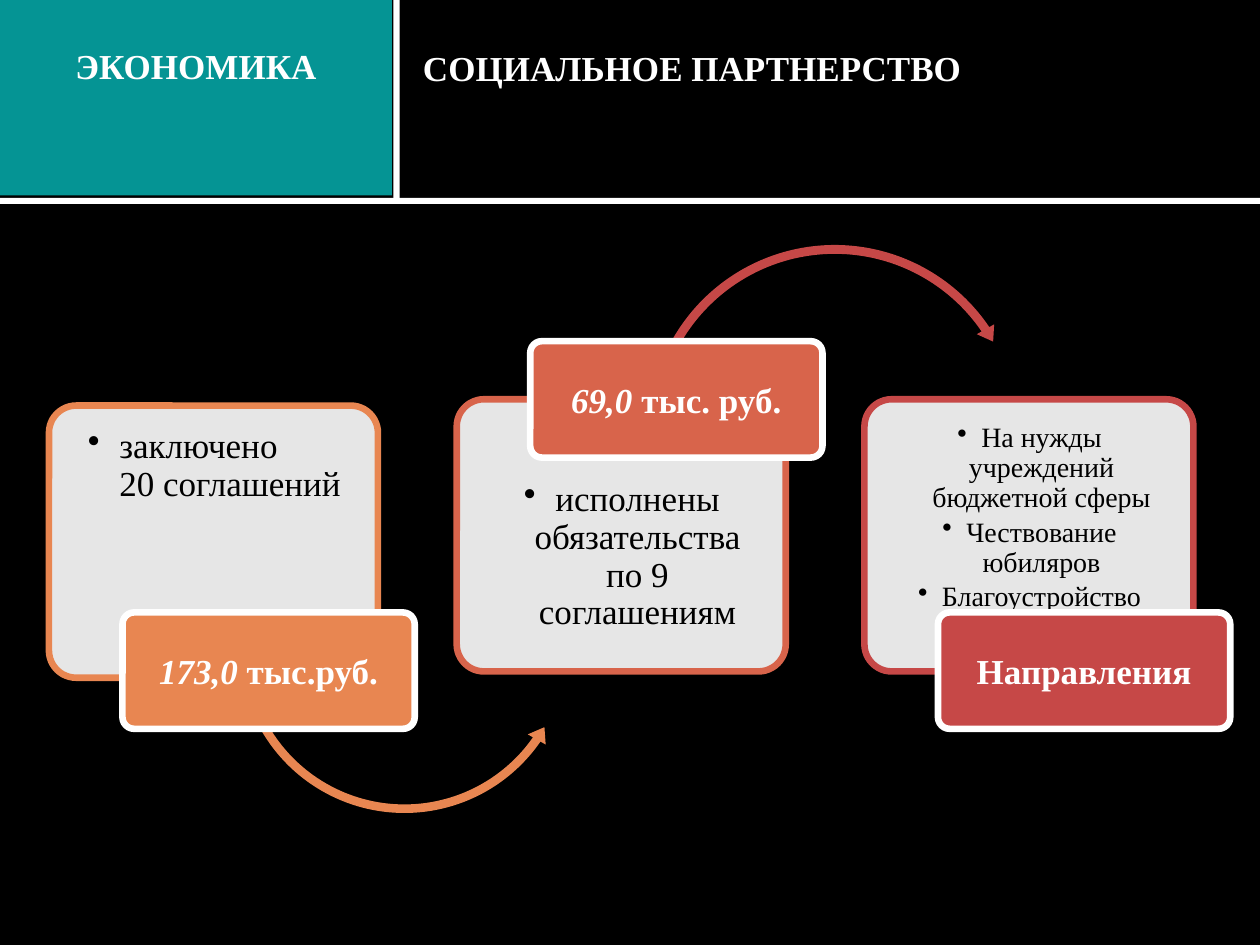
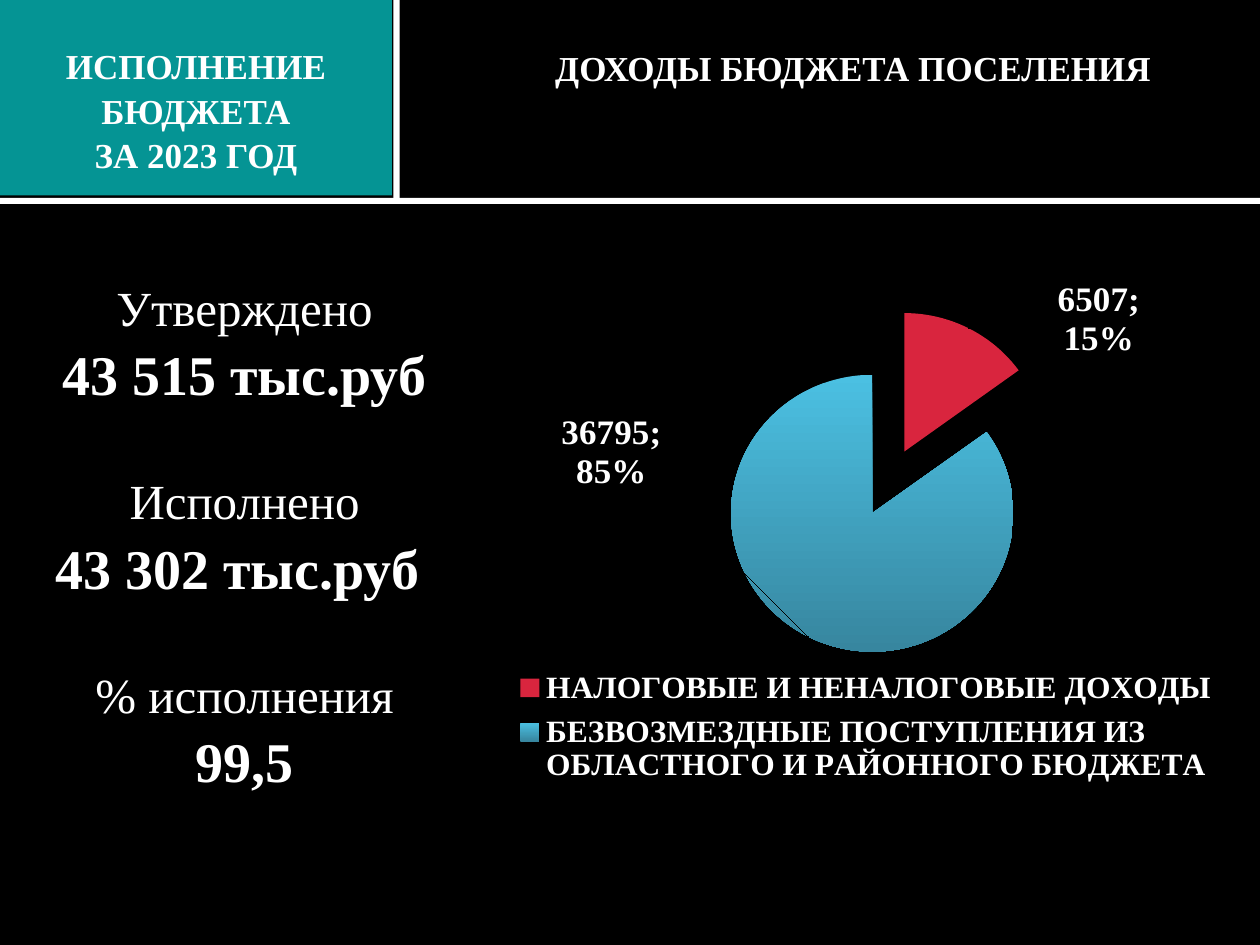
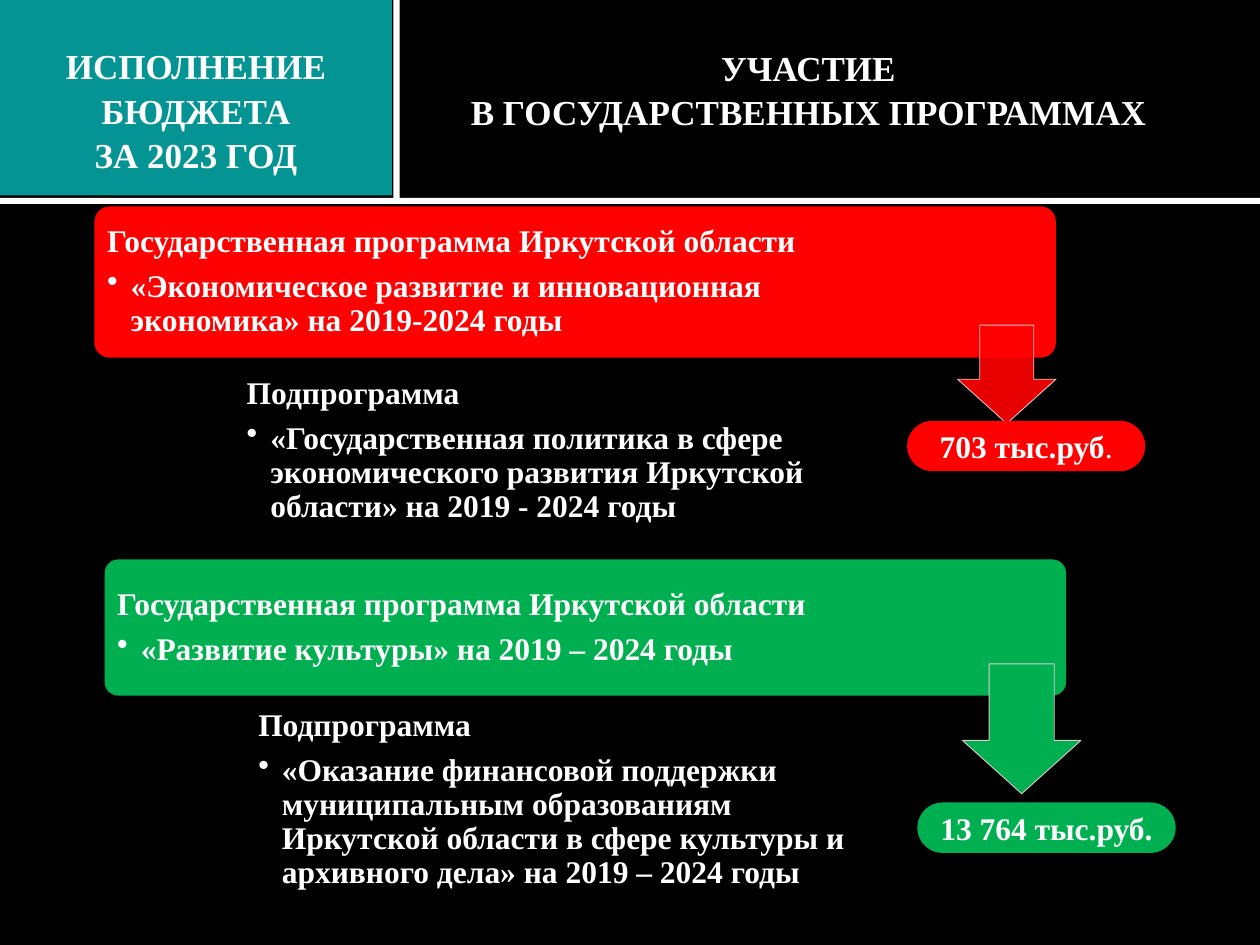
from dataclasses import dataclass

from lxml.etree import SubElement
from pptx import Presentation
from pptx.chart.data import CategoryChartData
from pptx.dml.color import RGBColor
from pptx.enum.chart import XL_CHART_TYPE, XL_LABEL_POSITION, XL_LEGEND_POSITION
from pptx.enum.shapes import MSO_SHAPE as SHAPE
from pptx.enum.text import MSO_ANCHOR as ANCHOR, MSO_AUTO_SIZE, PP_ALIGN as ALIGN
from pptx.oxml.ns import qn
from pptx.util import Pt


@dataclass(frozen=True)
class Theme:
    font: str = "Times New Roman"
    black: str = "000000"
    white: str = "FFFFFF"
    teal: str = "059494"
    orange: str = "E88651"
    coral: str = "D8644B"
    crimson: str = "C64847"
    red: str = "FF0000"
    green: str = "00B050"
    arrow_edge: str = "F5D4D7"
    tax_income: str = "D9253E"
    grants_top: str = "4BC0E2"
    grants_bottom: str = "37869F"
    heading: float = 20
    program: float = 18
    detail: float = 16
    caption: float = 28
    figure: float = 32


THEME = Theme()
BUDGET_SECTION = "ИСПОЛНЕНИЕ\nБЮДЖЕТА\nЗА 2023 ГОД"


def rgb(color):
    return RGBColor.from_string(color)


def set_alpha(fill_parent, percent):
    color = next(fill_parent.iter(qn("a:srgbClr")))
    SubElement(color, qn("a:alpha")).set("val", str(percent * 1000))


def style_font(font, size, color=THEME.white, bold=False, italic=False):
    font.name = THEME.font
    font.size = Pt(size)
    font.bold = bold
    font.italic = italic
    font.color.rgb = rgb(color)


def style_paragraph(paragraph, size, color=THEME.white, bold=False, align=ALIGN.CENTER):
    paragraph.alignment = align
    for run in paragraph.runs:
        style_font(run.font, size, color, bold)


def add_bullet(paragraph, margin, hanging):
    properties = paragraph._p.get_or_add_pPr()
    properties.set("marL", str(Pt(margin)))
    properties.set("indent", str(-Pt(hanging)))
    SubElement(properties, qn("a:buChar")).set("char", "•")


def set_frame(frame, insets=(0, 0, 0, 0), anchor=ANCHOR.TOP, wrap=True):
    frame.margin_left, frame.margin_top, frame.margin_right, frame.margin_bottom = map(Pt, insets)
    frame.vertical_anchor = anchor
    frame.word_wrap = wrap
    frame.auto_size = MSO_AUTO_SIZE.NONE


def add_block(slide, preset, box, fill, line=None, line_width=3.78, adjustments=()):
    block = slide.shapes.add_shape(preset, *map(Pt, box))
    block.shadow.inherit = False
    block.fill.solid()
    block.fill.fore_color.rgb = rgb(fill)
    if line:
        block.line.color.rgb = rgb(line)
        block.line.width = Pt(line_width)
    else:
        block.line.fill.background()
    for index, value in enumerate(adjustments):
        block.adjustments[index] = value
    return block


def add_text(slide, box, insets, anchor=ANCHOR.TOP):
    frame = slide.shapes.add_textbox(*map(Pt, box)).text_frame
    set_frame(frame, insets, anchor)
    return frame


def write_heading(frame, text):
    frame.text = text
    for index, paragraph in enumerate(frame.paragraphs):
        style_paragraph(paragraph, THEME.heading, bold=True)
        paragraph.space_before = Pt(1.3 if index else 0)


def write_amount(block, parts, size):
    set_frame(block.text_frame, anchor=ANCHOR.MIDDLE)
    paragraph = block.text_frame.paragraphs[0]
    paragraph.alignment = ALIGN.CENTER
    for text, bold, italic in parts:
        run = paragraph.add_run()
        run.text = text
        style_font(run.font, size, bold=bold, italic=italic)


def share_frame(layout, slide):
    bands = (
        ((0, 113, 720, 3.6), THEME.white),
        ((0, 0, 720, 113), THEME.black),
        ((224.8, 0, 3.6, 114.5), THEME.white),
    )
    for index, (box, fill) in enumerate(bands):
        band = add_block(slide, SHAPE.RECTANGLE, box, fill).element
        band.nvSpPr.cNvPr.set("id", str(20 + index))
        layout.shapes.element.insert(2 + index, band)


def add_headed_slide(prs, section, title, left, width):
    slide = prs.slides.add_slide(prs.slide_layouts[5])
    tag = add_block(slide, SHAPE.RECTANGLE, (0, 0, 224, 111.6), THEME.teal)
    set_frame(tag.text_frame, (0, 25.6, 0, 0), wrap=False)
    write_heading(tag.text_frame, section)
    heading = slide.shapes.title
    heading.left, heading.top, heading.width, heading.height = map(Pt, (left, 21, width, 55))
    set_frame(heading.text_frame, (7.2, 5.3, 7.2, 3.6), wrap=False)
    write_heading(heading.text_frame, title)
    return slide


def add_card(slide, left, top, text_top, color, lines, size, indent, align=ALIGN.CENTER):
    card = add_block(slide, SHAPE.ROUNDED_RECTANGLE, (left, top, 188, 155.5),
                     THEME.white, color, adjustments=(0.1,))
    set_alpha(card.element.spPr.find(qn("a:solidFill")), 90)
    frame = add_text(slide, (left + 3.6, text_top, 181.4, 115), (10, 10, 10, 10))
    frame.text = "\n".join(lines)
    for paragraph in frame.paragraphs:
        add_bullet(paragraph, *indent)
        paragraph.line_spacing = 0.9
        paragraph.space_after = Pt(size * 0.15)
        style_paragraph(paragraph, size, THEME.black, align=align)


def add_label(slide, left, top, color, parts):
    label = add_block(slide, SHAPE.ROUNDED_RECTANGLE, (left, top, 167, 66.5),
                      color, THEME.white, adjustments=(0.1,))
    write_amount(label, parts, THEME.heading)


def build_partnership(slide):
    lefts = [28 + 233 * column for column in range(3)]
    add_card(slide, lefts[0], 231.8, 234.7, THEME.orange,
             ["заключено\v20 соглашений"], THEME.heading, (26.6, 18), ALIGN.LEFT)
    add_block(slide, SHAPE.LEFT_CIRCULAR_ARROW, (133.2, 272.2, 195.8, 195.8), THEME.orange,
              adjustments=(0.025, 3.094, 20.849, 90.245, 0.03))
    add_label(slide, lefts[0] + 42, 350, THEME.orange,
              [("173,0", True, True), (" тыс.руб.", True, False)])
    add_card(slide, lefts[1], 228.2, 265, THEME.coral,
             ["исполнены обязательства по 9 соглашениям"], THEME.heading, (18, 18))
    add_block(slide, SHAPE.CIRCULAR_ARROW, (367.2, 136.8, 219.6, 219.6), THEME.crimson,
              adjustments=(0.023, 2.738, 195.507, 125.755, 0.026))
    add_label(slide, lefts[1] + 42, 195, THEME.coral,
              [("69,0 ", True, True), ("тыс. руб.", True, False)])
    add_card(slide, lefts[2], 228.2, 231.8, THEME.crimson,
             ["На нужды учреждений бюджетной сферы", "Чествование юбиляров", "Благоустройство"],
             THEME.detail, (13.7, 13.7))
    add_label(slide, lefts[2] + 42, 350, THEME.crimson, [("Направления", True, False)])


def add_totals(slide, totals):
    frame = add_text(slide, (24.5, 148.3, 233.3, 348.5), (4.3, 10, 7.2, 3.6))
    frame.text = "\n".join(f"{caption}\n{figure}" for caption, figure in totals)
    for index, paragraph in enumerate(frame.paragraphs):
        is_figure = index % 2 == 1
        style_paragraph(paragraph, THEME.figure if is_figure else THEME.caption, bold=is_figure)
        paragraph.space_before = Pt(2 if is_figure else 36.7 if index else 0)


def add_manual_layout(parent, **values):
    layout = SubElement(parent, qn("c:layout"))
    manual = SubElement(layout, qn("c:manualLayout"))
    for tag, value in values.items():
        SubElement(manual, qn(f"c:{tag}")).set("val", str(value))
    return layout


def add_income_pie(slide):
    data = CategoryChartData()
    data.categories = ["НАЛОГОВЫЕ И НЕНАЛОГОВЫЕ ДОХОДЫ",
                       "БЕЗВОЗМЕЗДНЫЕ ПОСТУПЛЕНИЯ ИЗ ОБЛАСТНОГО И РАЙОННОГО БЮДЖЕТА"]
    data.add_series("Series 1", (6507, 36795))
    box = map(Pt, (286.6, 139.7, 408.2, 351.4))
    chart = slide.shapes.add_chart(XL_CHART_TYPE.PIE, *box, data).chart
    chart.has_title = False
    style_font(chart.font, THEME.program, bold=True)
    chart.has_legend = True
    legend = chart.legend
    legend.position = XL_LEGEND_POSITION.BOTTOM
    legend.include_in_layout = False
    style_font(legend.font, THEME.program, bold=True)
    legend._element.find(qn("c:legendPos")).addnext(add_manual_layout(
        legend._element, xMode="edge", yMode="edge", x=0.02, y=0.67, w=0.98, h=0.22))

    plot = chart.plots[0]
    plot.vary_by_categories = True
    area = chart._chartSpace.chart.plotArea
    for old_layout in area.findall(qn("c:layout")):
        area.remove(old_layout)
    area.insert(0, add_manual_layout(area, layoutTarget="inner", xMode="edge", yMode="edge",
                                     x=0.149, y=0.088, w=0.785, h=0.574))

    series = plot.series[0]
    taxes, grants = (series.points[index] for index in range(2))
    taxes.format.fill.solid()
    taxes.format.fill.fore_color.rgb = rgb(THEME.tax_income)
    shading = grants.format.fill
    shading.gradient()
    shading.gradient_angle = 270
    for stop, color in zip(shading.gradient_stops, (THEME.grants_top, THEME.grants_bottom)):
        stop.color.rgb = rgb(color)
    explosion = SubElement(series._element, qn("c:explosion"))
    explosion.set("val", "25")
    series._element.find(qn("c:dPt")).addprevious(explosion)

    for point in (taxes, grants):
        style_font(point.data_label.font, THEME.heading, bold=True)
        point.data_label.position = XL_LABEL_POSITION.OUTSIDE_END
    shifts = ((0.12, 0.06), (-0.2, -0.38))
    for label, (x, y) in zip(series._element.iter(qn("c:dLbl")), shifts):
        label.find(qn("c:idx")).addnext(add_manual_layout(label, x=x, y=y))
        label.find(qn("c:showPercent")).set("val", "1")
        SubElement(label, qn("c:separator")).text = ";\n"


def add_program_text(slide, box, heading, name):
    frame = add_text(slide, box, (5, 5, 5, 5), ANCHOR.MIDDLE)
    frame.text = f"{heading}\n{name}"
    add_bullet(frame.paragraphs[1], 13.5, 13.5)
    for paragraph, gap in zip(frame.paragraphs, (0.35, 0.15)):
        paragraph.line_spacing = 0.9
        paragraph.space_after = Pt(THEME.program * gap)
        style_paragraph(paragraph, THEME.program, bold=True, align=ALIGN.LEFT)


def add_program(slide, color, panel, program_box, program, sub_box, subprogram,
                arrow_box, arrow_opacity, amount_box, amount):
    add_block(slide, SHAPE.ROUNDED_RECTANGLE, panel, color, adjustments=(0.1,))
    add_program_text(slide, program_box, "Государственная программа Иркутской области", program)
    add_program_text(slide, sub_box, "Подпрограмма", subprogram)
    arrow = add_block(slide, SHAPE.DOWN_ARROW, arrow_box, color, THEME.arrow_edge, 0.5)
    arrow.adjustments[0], arrow.adjustments[1] = 0.45, 0.55
    arrow.adjustments[0], arrow.adjustments[1] = 0.55, 0.45
    set_alpha(arrow.element.spPr.find(qn("a:solidFill")), arrow_opacity)
    set_alpha(arrow.element.spPr.find(qn("a:ln")), 90)
    pill = add_block(slide, SHAPE.ROUNDED_RECTANGLE, amount_box, color, adjustments=(0.5,))
    write_amount(pill, amount, THEME.program)


def build_programs(slide):
    add_program(slide, THEME.red, (54, 118, 549.4, 86.4),
                (56.2, 120.2, 460, 81.4),
                "«Экономическое развитие и инновационная экономика» на 2019-2024 годы",
                (136, 207.4, 389.5, 100),
                "«Государственная политика в сфере экономического развития Иркутской области» "
                "на 2019 - 2024 годы",
                (547.2, 185.8, 56.2, 56.2), 90, (518.4, 240.5, 136, 28.8),
                [("703 тыс.руб", True, False), (".", False, False)])
    add_program(slide, THEME.green, (59.8, 319.7, 549.4, 77.8),
                (62, 321.8, 434.2, 73.4),
                "«Развитие культуры» на 2019 – 2024 годы",
                (142.6, 403.2, 371.5, 107.3),
                "«Оказание финансовой поддержки муниципальным образованиям Иркутской области "
                "в сфере культуры и архивного дела» на 2019 – 2024 годы",
                (550, 379.4, 67.7, 74.2), 100, (524.2, 458.6, 147.6, 28.8),
                [("13 764 тыс.руб.", True, False)])


def main():
    prs = Presentation()
    prs.slide_width, prs.slide_height = Pt(720), Pt(540)
    background = prs.slide_master.background.fill
    background.solid()
    background.fore_color.rgb = rgb(THEME.black)

    partnership = add_headed_slide(prs, "ЭКОНОМИКА", "СОЦИАЛЬНОЕ ПАРТНЕРСТВО", 234, 323)
    share_frame(prs.slide_layouts[5], partnership)
    build_partnership(partnership)

    income = add_headed_slide(prs, BUDGET_SECTION, "ДОХОДЫ БЮДЖЕТА ПОСЕЛЕНИЯ", 308.5, 358)
    add_totals(income, [("Утверждено", "43 515 тыс.руб"), ("Исполнено", "43 302 тыс.руб "),
                        ("% исполнения", "99,5")])
    add_income_pie(income)

    programs = add_headed_slide(prs, BUDGET_SECTION,
                                "УЧАСТИЕ\nВ ГОСУДАРСТВЕННЫХ ПРОГРАММАХ", 260, 404)
    build_programs(programs)
    prs.save("out.pptx")


if __name__ == "__main__":
    main()
